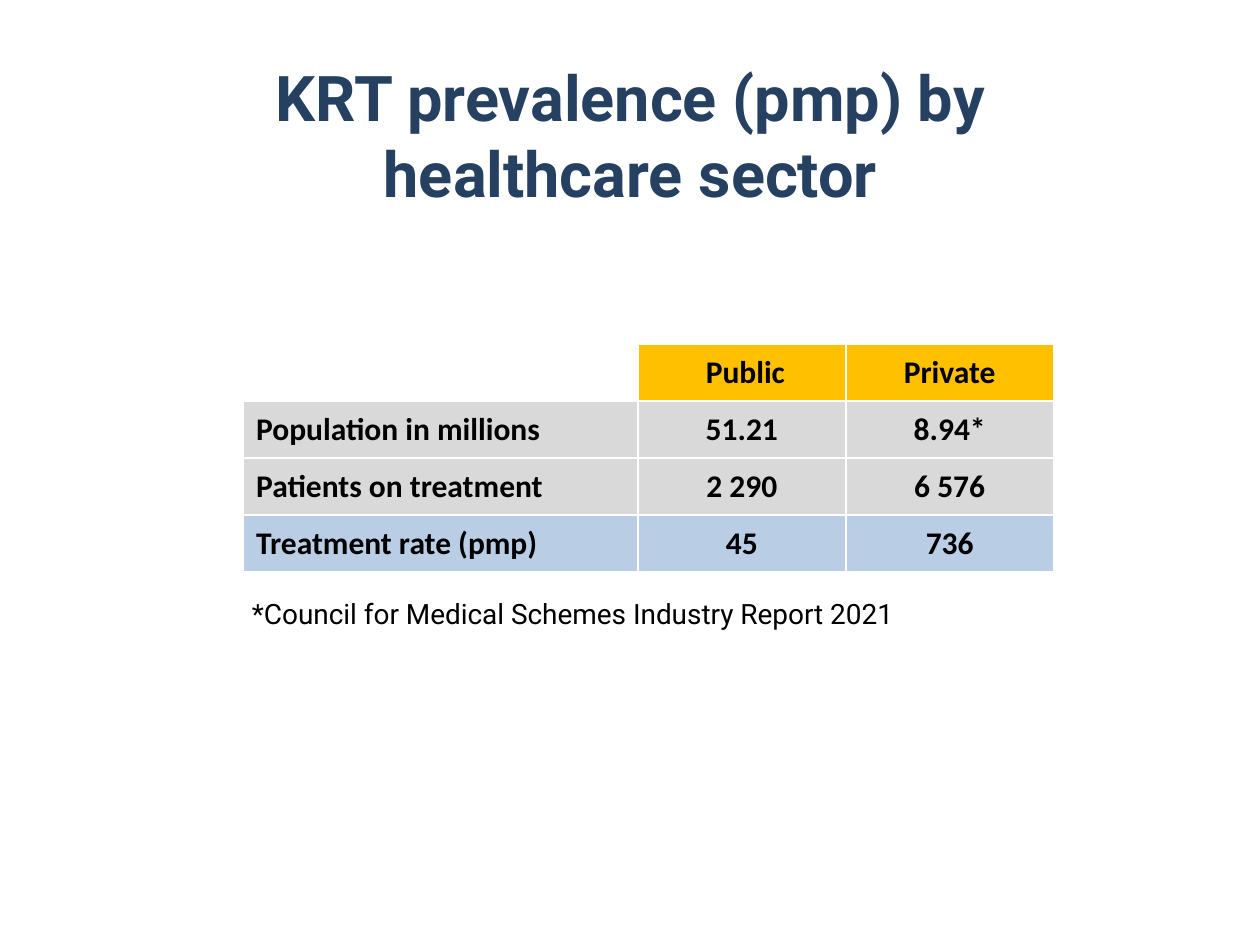
from pptx import Presentation
from pptx.dml.color import RGBColor
from pptx.enum.text import MSO_ANCHOR, PP_ALIGN
from pptx.util import Cm, Pt

TITLE = "KRT prevalence (pmp) by healthcare sector"
NOTE = "*Council for Medical Schemes Industry Report 2021"
ROWS = [
    ("", " Public", "Private"),
    ("Population in millions", "51.21", "8.94*"),
    ("Patients on treatment", "2 290", "6 576"),
    ("Treatment rate (pmp)", "45", "736"),
]
FILLS = ["gold", "gray", "gray", "blue"]
WIDTHS = [7.95, 4.19, 4.19]
HEIGHT = 1.15

THEME = {
    "navy": "254061", "black": "000000", "gold": "FFC000",
    "gray": "D9D9D9", "blue": "B9CDE5",
    "head": 36, "cell": 18, "note": 16,
    "main": "Roboto", "grid": "Calibri",
}


def color(name):
    return RGBColor.from_string(THEME[name])


def write(frame, text, size, font="main", ink="black", bold=False,
          align=PP_ALIGN.LEFT, anchor=MSO_ANCHOR.TOP):
    frame.word_wrap = True
    frame.vertical_anchor = anchor
    line = frame.paragraphs[0]
    line.alignment = align
    run = line.add_run()
    run.text = text
    run.font.name = THEME[font]
    run.font.size = Pt(THEME[size])
    run.font.bold = bold
    run.font.color.rgb = color(ink)


def fill_grid(table):
    table.horz_banding = False
    for col, width in zip(table.columns, WIDTHS):
        col.width = Cm(width)
    for r, (row, tint) in enumerate(zip(ROWS, FILLS)):
        table.rows[r].height = Cm(HEIGHT)
        for c, text in enumerate(row):
            cell = table.cell(r, c)
            if not text:
                cell.fill.background()
                continue
            cell.fill.solid()
            cell.fill.fore_color.rgb = color(tint)
            cell.vertical_anchor = MSO_ANCHOR.MIDDLE
            write(cell.text_frame, text, "cell", font="grid", bold=True,
                  align=PP_ALIGN.CENTER if c else PP_ALIGN.LEFT,
                  anchor=None)


def main():
    deck = Presentation()
    deck.slide_width, deck.slide_height = Cm(25.4), Cm(19.05)
    slide = deck.slides.add_slide(deck.slide_layouts[5])

    grid = slide.shapes.add_table(
        len(ROWS), len(WIDTHS), Cm(4.91), Cm(6.93),
        Cm(sum(WIDTHS)), Cm(HEIGHT * len(ROWS)))
    fill_grid(grid.table)

    title = slide.shapes.title
    title.left, title.top = Cm(2.69), Cm(1.12)
    title.width, title.height = Cm(20.04), Cm(3.18)
    write(title.text_frame, TITLE, "head", ink="navy", bold=True,
          align=PP_ALIGN.CENTER, anchor=MSO_ANCHOR.MIDDLE)

    note = slide.shapes.add_textbox(Cm(4.83), Cm(11.91), Cm(14.15), Cm(0.94))
    write(note.text_frame, NOTE, "note")

    deck.save("out.pptx")


if __name__ == "__main__":
    main()
